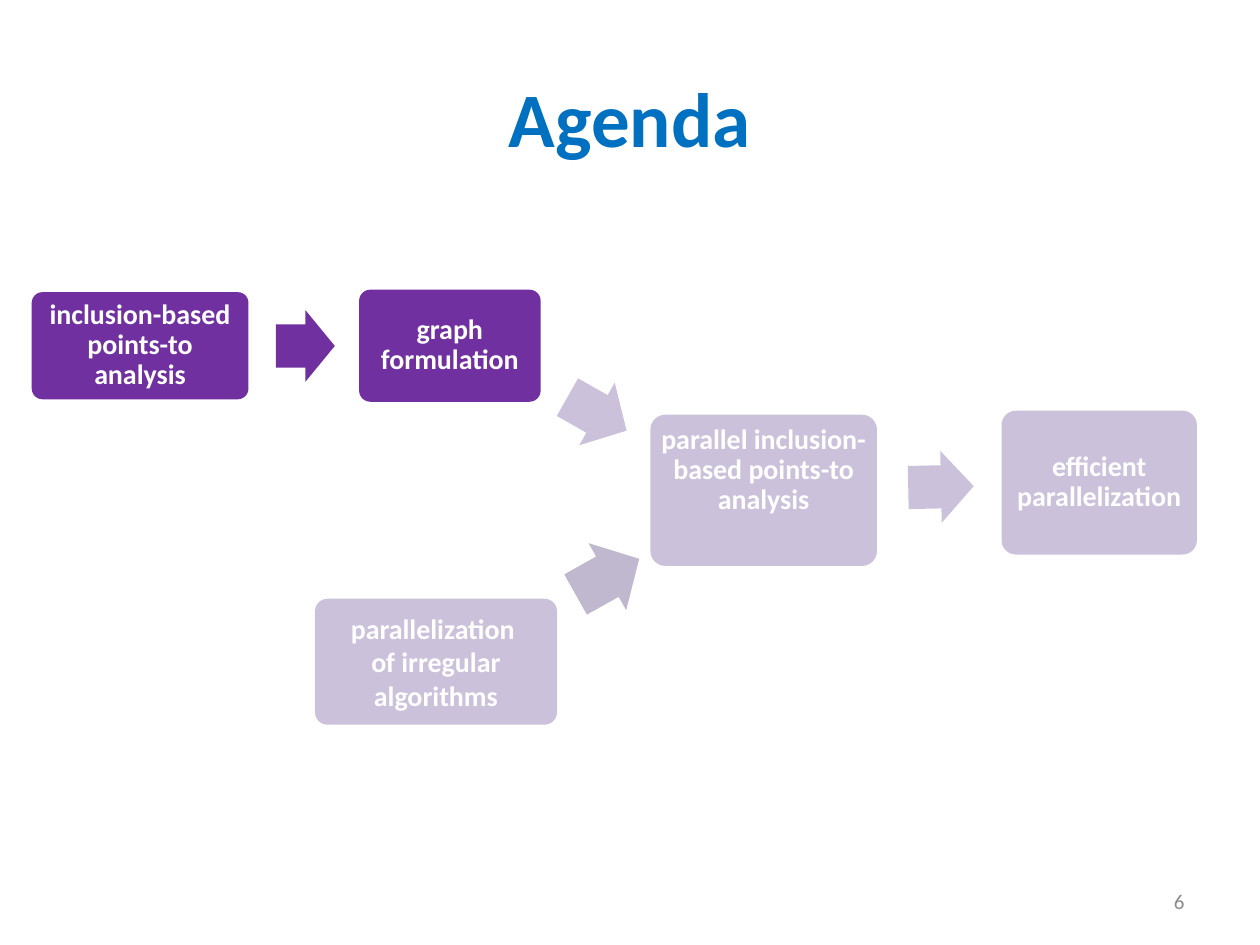
from pptx import Presentation
from pptx.dml.color import RGBColor
from pptx.enum.shapes import MSO_SHAPE
from pptx.enum.text import MSO_ANCHOR, PP_ALIGN
from pptx.util import Cm, Pt

ROUNDED = MSO_SHAPE.ROUNDED_RECTANGLE
ARROW = MSO_SHAPE.RIGHT_ARROW
TOP, MIDDLE = MSO_ANCHOR.TOP, MSO_ANCHOR.MIDDLE
CENTER, RIGHT = PP_ALIGN.CENTER, PP_ALIGN.RIGHT

FONT = "Calibri"
BLUE = RGBColor(0x00, 0x70, 0xC0)
PURPLE = RGBColor(0x70, 0x30, 0xA0)
LAVENDER = RGBColor(0xCC, 0xC1, 0xDA)
MAUVE = RGBColor(0xC0, 0xB8, 0xCE)
WHITE = RGBColor(0xFF, 0xFF, 0xFF)
GRAY = RGBColor(0x8C, 0x8C, 0x8C)

STEPS = [
    ("inclusion-based points-to analysis", (0.64, 5.89, 4.37, 2.16), PURPLE, MIDDLE),
    ("graph formulation", (7.24, 5.84, 3.66, 2.26), PURPLE, MIDDLE),
    ("parallel inclusion-based points-to analysis", (13.11, 8.36, 4.57, 3.05), LAVENDER, TOP),
    ("efficient parallelization", (20.19, 8.28, 3.94, 2.9), LAVENDER, MIDDLE),
]
ARROWS = [
    ((5.56, 6.25, 1.19, 1.45), 0, PURPLE),
    ((11.35, 7.62, 1.37, 1.45), 29.5, LAVENDER),
    ((18.31, 9.09, 1.32, 1.45), 358.8, LAVENDER),
    ((11.51, 10.85, 1.47, 1.55), 330.7, MAUVE),
]


def write_text(shape, text, size, color, bold=False, align=CENTER, anchor=MIDDLE):
    """Fill a shape with evenly formatted text."""
    frame = shape.text_frame
    frame.text = text
    frame.word_wrap = True
    frame.vertical_anchor = anchor
    for para in frame.paragraphs:
        para.alignment = align
        for span in para.runs:
            span.font.name = FONT
            span.font.size = Pt(size)
            span.font.bold = bold
            span.font.color.rgb = color


def add_label(page, text, place, size, color, **style):
    """Add a text box that stands on its own."""
    box = page.shapes.add_textbox(*map(Cm, place))
    write_text(box, text, size, color, **style)


def add_solid(page, kind, place, color, adjustments):
    """Add a filled preset shape without outline or shadow."""
    shape = page.shapes.add_shape(kind, *map(Cm, place))
    shape.shadow.inherit = False
    shape.fill.solid()
    shape.fill.fore_color.rgb = color
    shape.line.fill.background()
    for index, value in enumerate(adjustments):
        shape.adjustments[index] = value
    return shape


def add_box(page, text, place, color, anchor=MIDDLE):
    """Add a rounded box with bold white text."""
    box = add_solid(page, ROUNDED, place, color, [0.1])
    write_text(box, text, 16, WHITE, bold=True, anchor=anchor)
    return box


def add_step(page, text, place, color, anchor):
    """Add a flow step with tight margins and line spacing."""
    frame = add_box(page, text, place, color, anchor).text_frame
    frame.margin_left = frame.margin_right = Cm(0.12)
    frame.margin_top = frame.margin_bottom = Cm(0.12)
    frame.paragraphs[0].line_spacing = 0.9


def add_arrow(page, place, angle, color):
    """Add a block arrow turned by an angle in degrees."""
    arrow = add_solid(page, ARROW, place, color, [0.6, 0.5])
    arrow.rotation = angle


def main():
    """Build the agenda slide and save it."""
    deck = Presentation()
    deck.slide_width, deck.slide_height = Cm(25.4), Cm(19.05)
    page = deck.slides.add_slide(deck.slide_layouts[6])
    add_label(page, "Agenda", (1.27, 0.76, 22.86, 3.18), 44, BLUE, bold=True)
    for step in STEPS:
        add_step(page, *step)
    add_box(page, "parallelization \nof irregular algorithms", (6.35, 12.07, 4.88, 2.54), LAVENDER)
    for arrow in ARROWS:
        add_arrow(page, *arrow)
    add_label(page, "6", (18.21, 17.65, 5.92, 1.02), 12, GRAY, align=RIGHT)
    deck.save("out.pptx")


if __name__ == "__main__":
    main()
